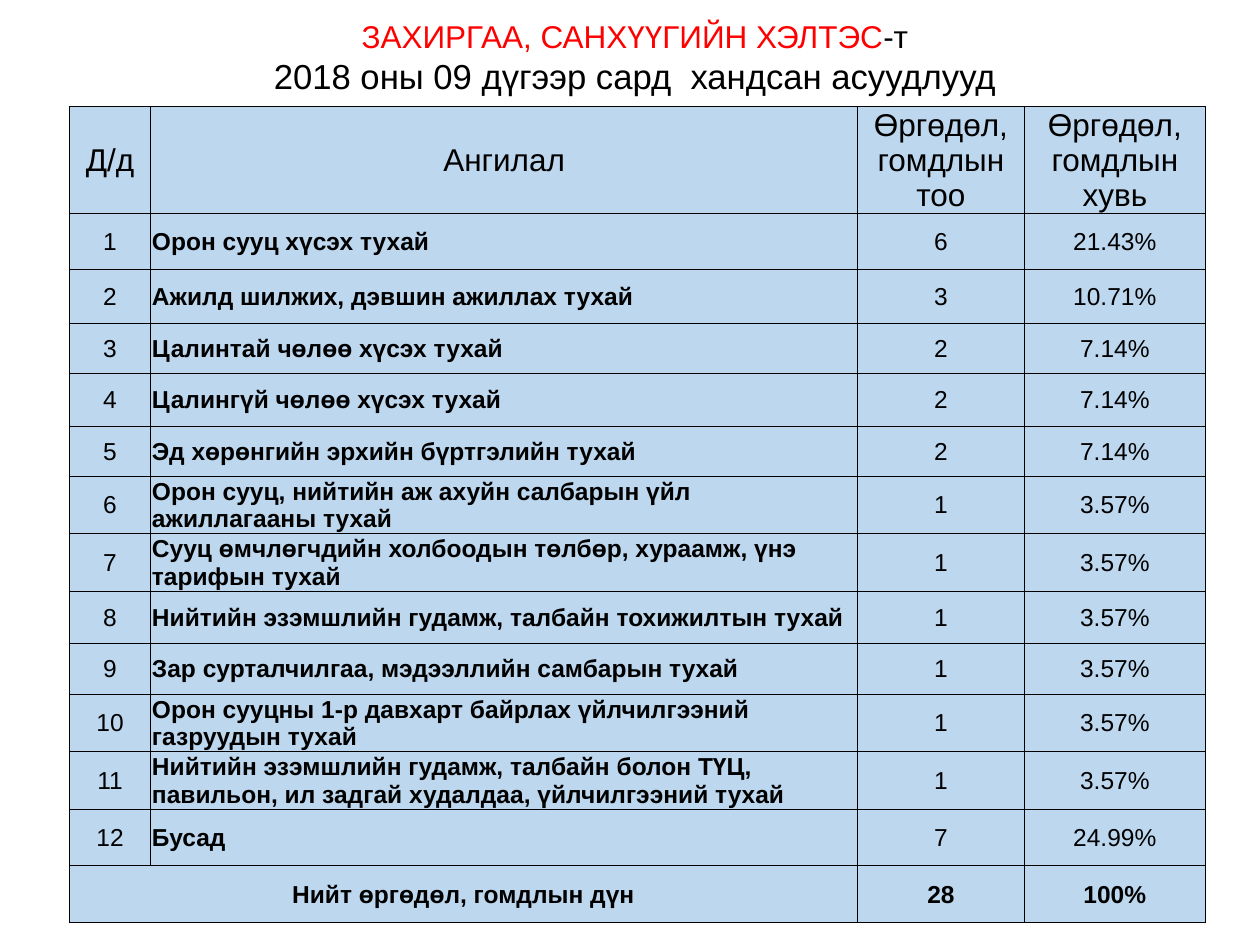
from pptx import Presentation
from pptx.dml.color import RGBColor
from pptx.enum.text import MSO_ANCHOR, PP_ALIGN
from pptx.oxml import parse_xml
from pptx.oxml.ns import nsdecls
from pptx.util import Pt

CENTER, LEFT = PP_ALIGN.CENTER, PP_ALIGN.LEFT
MIDDLE = MSO_ANCHOR.MIDDLE

COLORS = {"text": "000000", "department": "FF0000", "cell": "BDD7EE", "border": "000000"}
FONT = "Arial"

# Content
DEPARTMENT, SUFFIX = "ЗАХИРГАА, САНХҮҮГИЙН ХЭЛТЭС", "-т"
PERIOD = "2018 оны 09 дүгээр сард  хандсан асуудлууд"
HEADER = ("Д/д", "Ангилал", "Өргөдөл, гомдлын тоо", "Өргөдөл, гомдлын хувь")
# Category, number of requests, share, row height
CATEGORIES = [
    ("Орон сууц хүсэх тухай", "6", "21.43%", 32),
    ("Ажилд шилжих, дэвшин ажиллах тухай", "3", "10.71%", 31),
    ("Цалинтай чөлөө хүсэх тухай", "2", "7.14%", 28.6),
    ("Цалингүй чөлөө хүсэх тухай", "2", "7.14%", 30.2),
    ("Эд хөрөнгийн эрхийн бүртгэлийн тухай", "2", "7.14%", 28.6),
    ("Орон сууц, нийтийн аж ахуйн салбарын үйл ажиллагааны тухай", "1", "3.57%", 32.8),
    ("Сууц өмчлөгчдийн холбоодын төлбөр, хураамж, үнэ тарифын тухай", "1", "3.57%", 32.8),
    ("Нийтийн эзэмшлийн гудамж, талбайн тохижилтын тухай", "1", "3.57%", 30),
    ("Зар сурталчилгаа, мэдээллийн самбарын тухай", "1", "3.57%", 29),
    ("Орон сууцны 1-р давхарт байрлах үйлчилгээний газруудын тухай", "1", "3.57%", 32.8),
    ("Нийтийн эзэмшлийн гудамж, талбайн болон ТҮЦ, павильон, ил задгай худалдаа, "
     "үйлчилгээний тухай", "1", "3.57%", 32.8),
    ("Бусад", "7", "24.99%", 32.5),
]
TOTAL = ("Нийт өргөдөл, гомдлын дүн", "", "28", "100%")

# Layout
TABLE_LEFT, TABLE_TOP = 39.6, 60.8
COLUMN_WIDTHS = (46.6, 403.9, 95.3, 103.5)
HEADER_HEIGHT, TOTAL_HEIGHT = 61, 32.5
LINE_HEIGHTS = {18: 20.1, 14: 15.7}


def rgb(name):
    return RGBColor.from_string(COLORS[name])


def style(paragraph, size, align=CENTER, bold=False):
    paragraph.alignment = align
    font = paragraph.font
    font.name, font.size, font.bold = FONT, Pt(size), bold
    font.color.rgb = rgb("text")


def add_borders(cell):
    properties = cell._tc.get_or_add_tcPr()
    for position, side in enumerate(("lnL", "lnR", "lnT", "lnB")):
        properties.insert(position, parse_xml(
            f'<a:{side} {nsdecls("a")} w="6350"><a:solidFill>'
            f'<a:srgbClr val="{COLORS["border"]}"/></a:solidFill></a:{side}>'))


def fill_cell(cell, text, size, align, bold):
    cell.vertical_anchor = MIDDLE
    cell.margin_left = cell.margin_right = cell.margin_top = Pt(0.7)
    cell.margin_bottom = 0
    cell.fill.solid()
    cell.fill.fore_color.rgb = rgb("cell")
    add_borders(cell)
    cell.text = text
    paragraph = cell.text_frame.paragraphs[0]
    style(paragraph, size, align, bold)
    paragraph.line_spacing = Pt(LINE_HEIGHTS[size])


prs = Presentation()
prs.slide_width, prs.slide_height = Pt(720), Pt(540)
slide = prs.slides.add_slide(prs.slide_layouts[6])

# Title
title = slide.shapes.add_textbox(Pt(57.9), Pt(11.5), Pt(609.8), Pt(46.8)).text_frame
title.word_wrap = True
title.vertical_anchor = MIDDLE
title.margin_top, title.margin_bottom = 0, Pt(5.3)
heading = title.paragraphs[0]
style(heading, 18)
department = heading.add_run()
department.text = DEPARTMENT
department.font.color.rgb = rgb("department")
heading.add_run().text = SUFFIX
period = title.add_paragraph()
period.text = PERIOD
style(period, 19.8)

# Table rows: texts, height, size, bold flag per column
rows = [(HEADER, HEADER_HEIGHT, 18, (False,) * 4)]
for number, (category, count, share, height) in enumerate(CATEGORIES, 1):
    rows.append(((str(number), category, count, share), height, 14,
                 (False, True, False, False)))
rows.append((TOTAL, TOTAL_HEIGHT, 14, (True,) * 4))

# Table
table = slide.shapes.add_table(
    len(rows), len(COLUMN_WIDTHS), Pt(TABLE_LEFT), Pt(TABLE_TOP),
    Pt(sum(COLUMN_WIDTHS)), Pt(sum(row[1] for row in rows))).table
table.first_row = table.horz_banding = False
for column, width in zip(table.columns, COLUMN_WIDTHS):
    column.width = Pt(width)
for r, (texts, height, size, bolds) in enumerate(rows):
    table.rows[r].height = Pt(height)
    for c, (text, bold) in enumerate(zip(texts, bolds)):
        is_category = c == 1 and 0 < r <= len(CATEGORIES)
        fill_cell(table.cell(r, c), text, size, LEFT if is_category else CENTER, bold)
last = len(rows) - 1
table.cell(last, 0).merge(table.cell(last, 1))

prs.save("out.pptx")
